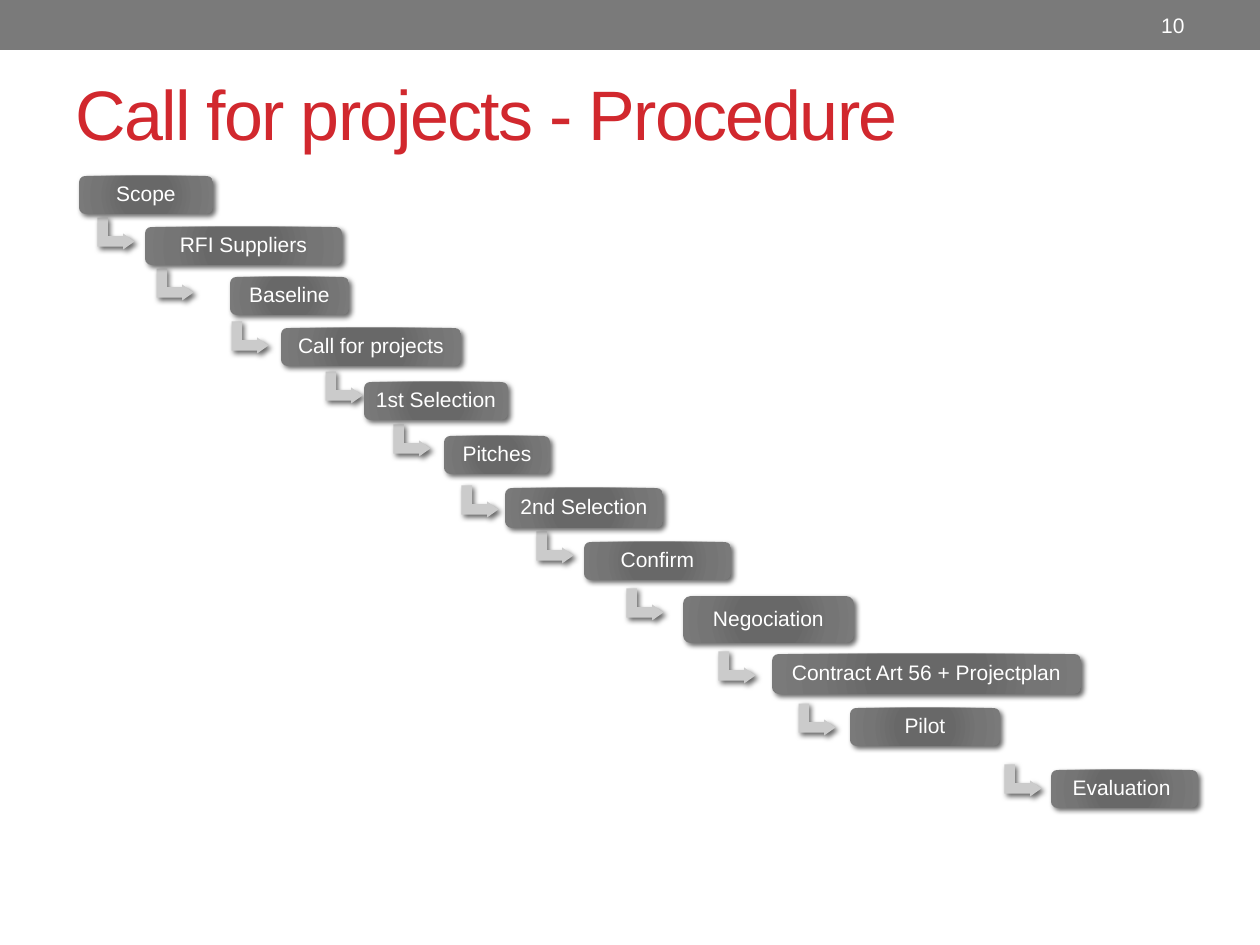
from pptx import Presentation
from pptx.dml.color import RGBColor
from pptx.enum.shapes import MSO_SHAPE
from pptx.enum.text import MSO_ANCHOR, MSO_AUTO_SIZE, PP_ALIGN
from pptx.oxml import parse_xml
from pptx.oxml.ns import nsdecls, qn
from pptx.util import Emu, Pt

SCALE = 914400 / 126  # EMU per px

RED = RGBColor(0xD1, 0x28, 0x2E)
WHITE = RGBColor(0xFF, 0xFF, 0xFF)
BAR_GRAY = RGBColor(0x7A, 0x7A, 0x7A)
ARROW_GRAY = RGBColor(0xCB, 0xCB, 0xCB)
BLACK = RGBColor(0x00, 0x00, 0x00)
STEP_STOPS = [(0, RGBColor(0x68, 0x68, 0x68)), (34, RGBColor(0x68, 0x68, 0x68)),
              (70, RGBColor(0x75, 0x75, 0x75)), (100, BAR_GRAY)]

# Step: label, left, top, width, height
STEPS = [
    ("Scope", 79, 176, 134, 38),
    ("RFI Suppliers", 145, 227, 197, 38),
    ("Baseline", 230, 277, 119, 38),
    ("Call for projects", 281, 328, 180, 38),
    ("1st Selection", 364, 382, 144, 38),
    ("Pitches", 444, 436, 106, 38),
    ("2nd Selection", 505, 488, 158, 40),
    ("Confirm", 584, 542, 147, 38),
    ("Negociation", 683, 596, 171, 47),
    ("Contract Art 56 + Projectplan", 772, 654, 309, 40),
    ("Pilot", 850, 708, 150, 38),
    ("Evaluation ", 1051, 770, 147, 38),
]
# Left and top of the arrow that leads out of each step but the last
ARROWS = [(100, 215), (159, 266), (234, 319), (328, 369), (396, 422), (464, 483),
          (539, 529), (629, 586), (721, 649), (801, 701), (1007, 762)]


def box(*lengths):
    return [Emu(round(v * SCALE)) for v in lengths]


class Deck:
    FONT = {"name": "Arial", "size": Pt(12)}

    def __init__(self, width, height):
        self.prs = Presentation()
        self.prs.slide_width, self.prs.slide_height = box(width, height)
        self.s = None

    def add_slide(self):
        self.s = self.prs.slides.add_slide(self.prs.slide_layouts[5])

    def set_text(self, sp, text, color, align, inset=None, **font):
        tf = sp.text_frame
        frame = {"word_wrap": True, "auto_size": MSO_AUTO_SIZE.NONE,
                 "vertical_anchor": MSO_ANCHOR.MIDDLE}
        if inset is not None:
            for side in ("left", "top", "right", "bottom"):
                frame["margin_" + side] = box(inset)[0]
        for name, value in frame.items():
            setattr(tf, name, value)
        p = tf.paragraphs[0]
        p.alignment = align
        r = p.add_run()
        r.text = text
        for name, value in {**self.FONT, **font}.items():
            setattr(r.font, name, value)
        r.font.color.rgb = color
        return p, r

    def title(self, text, *place):
        sp = self.s.shapes.title
        sp.left, sp.top, sp.width, sp.height = box(*place)
        p, r = self.set_text(sp, text, RED, PP_ALIGN.LEFT, size=Pt(40))
        r.font._element.set("spc", "-100")

    def label(self, text, *place):
        sp = self.s.shapes.add_textbox(*box(*place))
        self.set_text(sp, text, WHITE, PP_ALIGN.RIGHT)

    def shape(self, kind, place, fill=None, adjust=()):
        sp = self.s.shapes.add_shape(kind, *box(*place))
        sp.shadow.inherit = False
        sp.line.fill.background()
        if fill is not None:
            sp.fill.solid()
            sp.fill.fore_color.rgb = fill
        for i, value in enumerate(adjust):
            sp.adjustments[i] = value
        return sp

    def cast_shadow(self, sp):
        effects = sp._element.spPr.find(qn("a:effectLst"))
        effects.append(parse_xml(
            f'<a:outerShdw {nsdecls("a")} blurRad="{Pt(3)}" dist="{Pt(2)}" '
            f'dir="{45 * 60000}" algn="tl" rotWithShape="0"><a:srgbClr val="{BLACK}">'
            '<a:alpha val="60000"/></a:srgbClr></a:outerShdw>'))

    def step(self, text, *place):
        sp = self.shape(MSO_SHAPE.ROUNDED_RECTANGLE, place, adjust=[0.167])
        stops = "".join(f'<a:gs pos="{pos * 1000}"><a:srgbClr val="{color}"/></a:gs>'
                        for pos, color in STEP_STOPS)
        sp._element.spPr.find(qn("a:prstGeom")).addnext(parse_xml(
            f'<a:gradFill {nsdecls("a")} rotWithShape="1"><a:gsLst>{stops}</a:gsLst>'
            '<a:path path="circle"><a:fillToRect l="100000" t="100000" r="100000" '
            'b="100000"/></a:path></a:gradFill>'))
        self.cast_shadow(sp)
        p, r = self.set_text(sp, text, WHITE, PP_ALIGN.CENTER, inset=6)
        p.line_spacing = 0.9

    def arrow(self, left, top):
        sp = self.shape(MSO_SHAPE.BENT_UP_ARROW, (left, top, 32, 37), ARROW_GRAY,
                        [0.328, 0.25, 0.358])
        sp.rotation = 90
        self.cast_shadow(sp)


def main():
    deck = Deck(1260, 945)
    deck.add_slide()

    # Top bar with the page number
    deck.shape(MSO_SHAPE.RECTANGLE, (0, 0, 1260, 50), BAR_GRAY)
    deck.label("10", 1050, 3, 147, 45)

    deck.title("Call for projects - Procedure", 63, 45, 1134, 136)

    # Staircase of steps
    for place in ARROWS:
        deck.arrow(*place)
    for step in STEPS:
        deck.step(*step)

    deck.prs.save("out.pptx")


if __name__ == "__main__":
    main()
